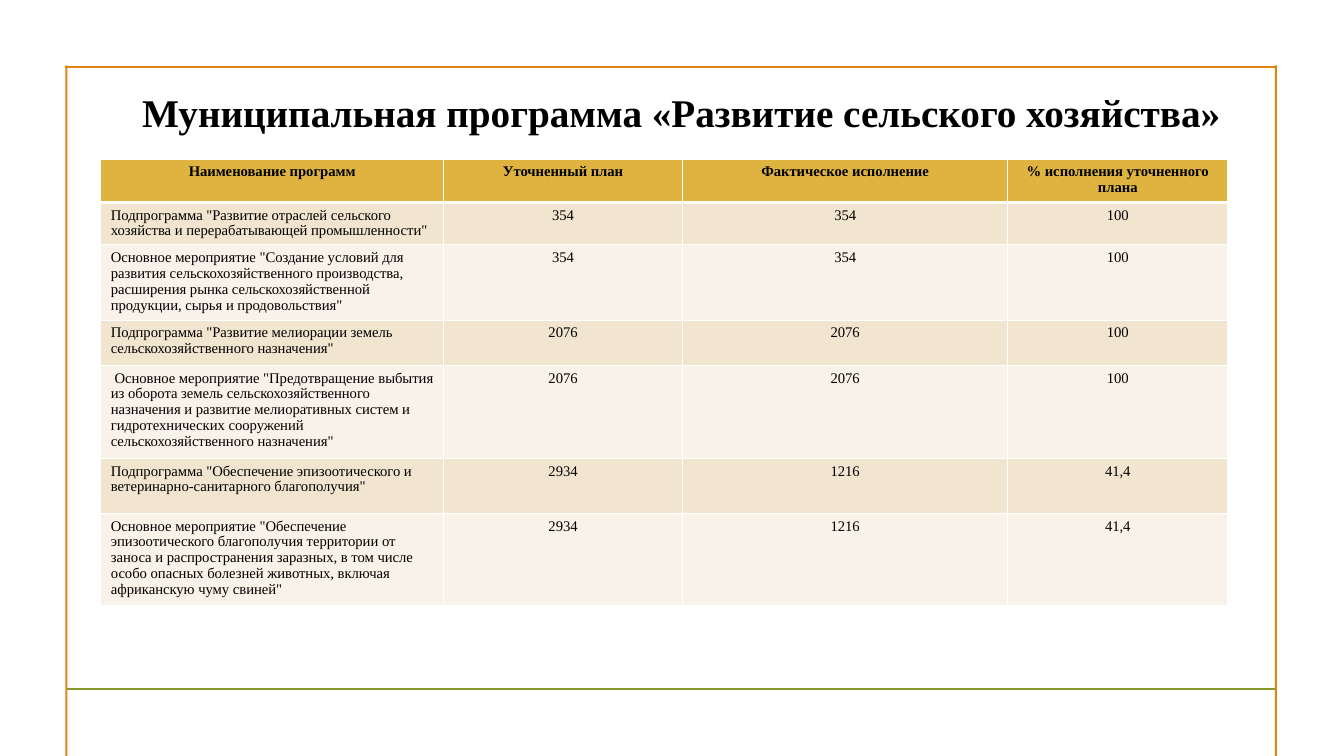
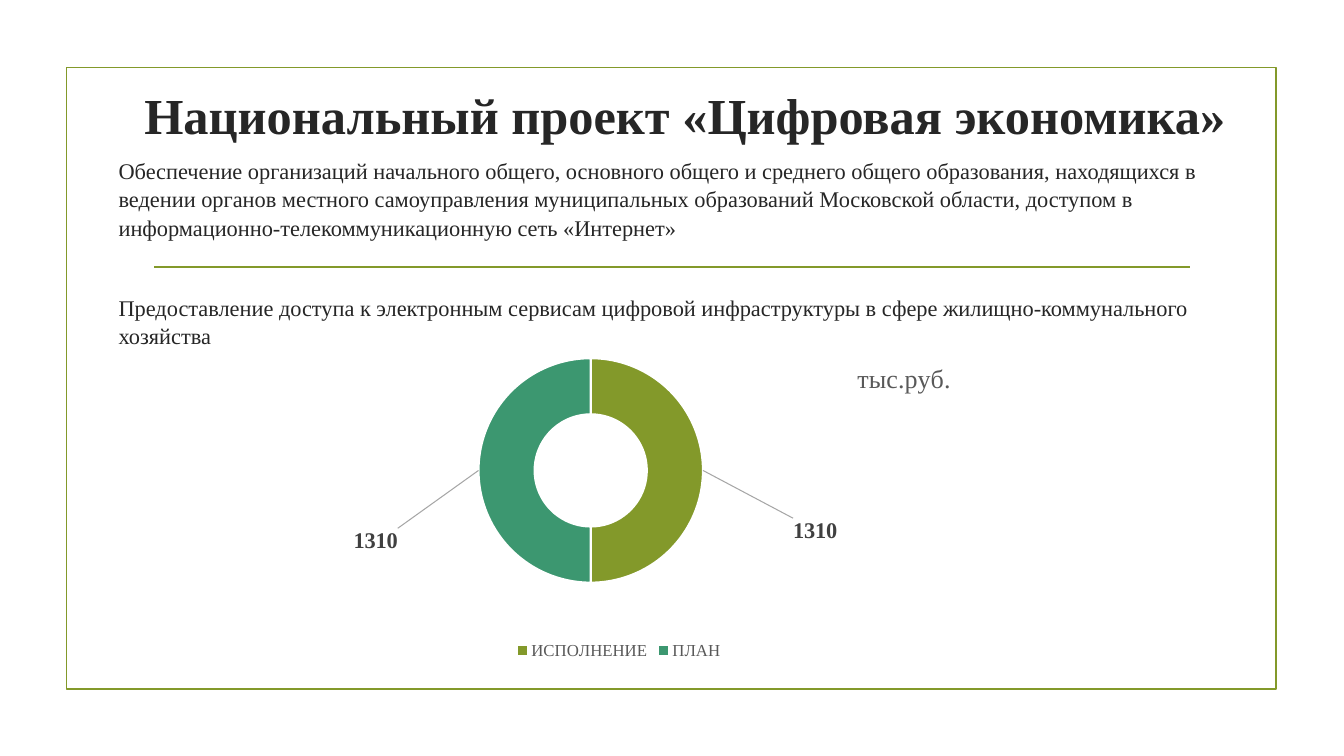
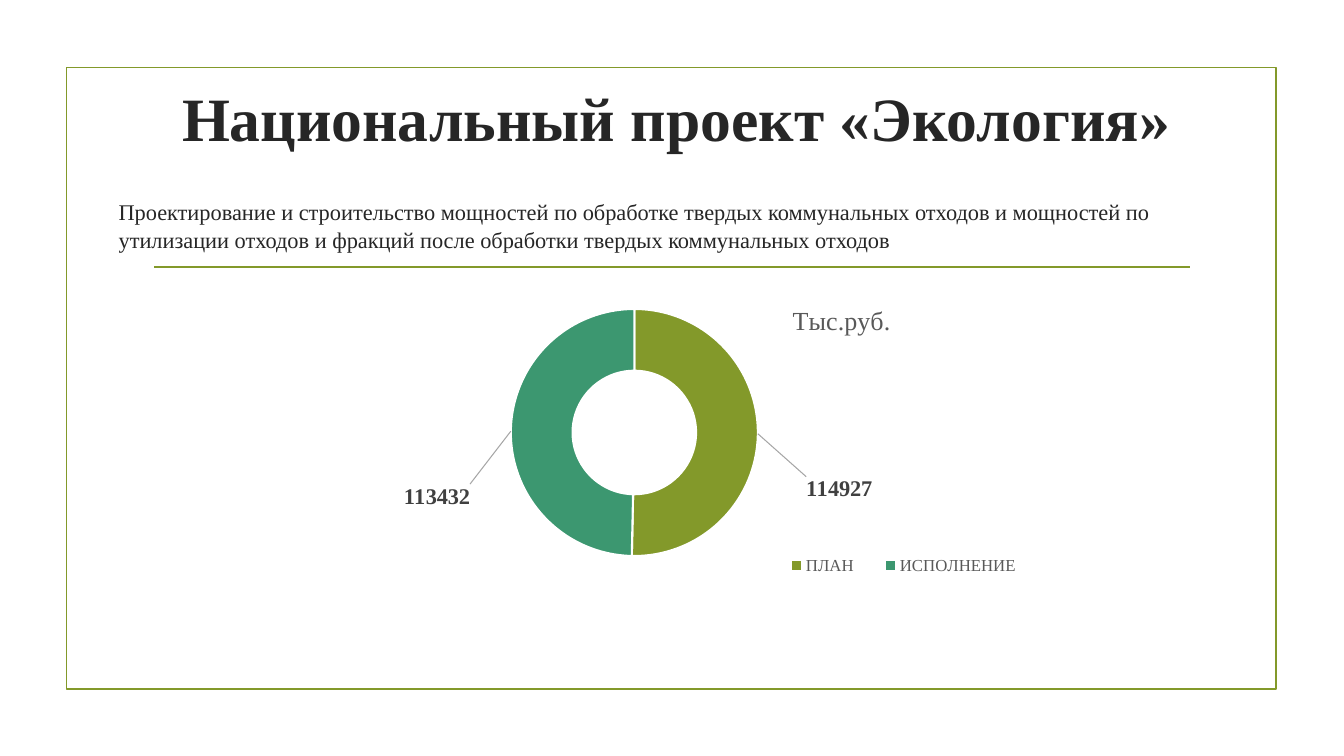
from lxml import etree
from pptx import Presentation
from pptx.chart.data import CategoryChartData
from pptx.dml.color import RGBColor
from pptx.enum import chart as charts, shapes, text
from pptx.oxml import parse_xml
from pptx.oxml.ns import nsdecls, qn
from pptx.util import Cm, Pt

FONT = "Times New Roman"
COLORS = {
    "ink": "262626", "black": "000000", "white": "FFFFFF", "label": "404040",
    "caption": "595959", "leader": "A6A6A6", "olive": "83992A",
    "teal": "3C9770", "orange": "E28312", "header": "DEB340",
    "band_dark": "F2E5CF", "band_light": "F9F2E8",
}
LABEL_OFFSETS = [(0.15, 0.18), (-0.14, 0.21)]

COLUMNS = [8.64, 6.02, 8.2, 5.54]
ROWS = [1.09, 1.07, 1.9, 1.14, 2.34, 1.39, 2.31]
PROGRAMS = [
    ("Наименование программ", "Уточненный план", "Фактическое исполнение",
     "% исполнения уточненного плана"),
    ('Подпрограмма "Развитие отраслей сельского хозяйства и '
     'перерабатывающей промышленности"', "354", "354", "100"),
    ('Основное мероприятие "Создание условий для развития '
     'сельскохозяйственного производства, расширения рынка '
     'сельскохозяйственной продукции, сырья и продовольствия"',
     "354", "354", "100"),
    ('Подпрограмма "Развитие мелиорации земель сельскохозяйственного '
     'назначения"', "2076", "2076", "100"),
    (' Основное мероприятие "Предотвращение выбытия из оборота земель '
     'сельскохозяйственного назначения и развитие мелиоративных систем и '
     'гидротехнических сооружений сельскохозяйственного назначения"',
     "2076", "2076", "100"),
    ('Подпрограмма "Обеспечение эпизоотического и '
     'ветеринарно-санитарного благополучия"', "2934", "1216", "41,4"),
    ('Основное мероприятие "Обеспечение эпизоотического благополучия '
     'территории от заноса и распространения заразных, в том числе особо '
     'опасных болезней животных, включая африканскую чуму свиней"',
     "2934", "1216", "41,4"),
]


def rgb(name):
    return RGBColor.from_string(COLORS[name])


def style(font, size, color, bold=False):
    font.name, font.size, font.bold = FONT, Pt(size), bold
    font.color.rgb = rgb(color)


def add_rect(slide, box, fill=None, line=None):
    rect = slide.shapes.add_shape(shapes.MSO_SHAPE.RECTANGLE, *map(Cm, box))
    rect.shadow.inherit = False
    if fill:
        rect.fill.solid()
        rect.fill.fore_color.rgb = rgb(fill)
    else:
        rect.fill.background()
    if line:
        rect.line.color.rgb = rgb(line)
        rect.line.width = Pt(1.25)
    else:
        rect.line.fill.background()


def add_rule(slide, left, right, y, color, width):
    rule = slide.shapes.add_connector(
        shapes.MSO_CONNECTOR.STRAIGHT, Cm(left), Cm(y), Cm(right), Cm(y))
    rule.line.color.rgb = rgb(color)
    rule.line.width = Pt(width)
    etree.SubElement(rule._element.spPr, qn("a:effectLst"))


def add_text(slide, box, paragraphs, size, color="ink", bold=False,
             align=text.PP_ALIGN.LEFT, anchor=text.MSO_ANCHOR.TOP,
             gap=0, spacing=None):
    frame = slide.shapes.add_textbox(*map(Cm, box)).text_frame
    frame.word_wrap = True
    frame.vertical_anchor = anchor
    for i, words in enumerate(paragraphs):
        paragraph = frame.add_paragraph() if i else frame.paragraphs[0]
        paragraph.text = words
        paragraph.alignment = align
        paragraph.line_spacing = spacing
        if i:
            paragraph.space_before = Pt(gap)
        style(paragraph.font, size, color, bold)


def add_title(slide, box, words, size):
    add_text(slide, box, [words], size, bold=True,
             align=text.PP_ALIGN.CENTER, anchor=text.MSO_ANCHOR.MIDDLE)


def add_body(slide, box, paragraphs):
    add_text(slide, box, paragraphs, 16, gap=37, spacing=1.05)


def new_slide(prs):
    """Blank slide with the green frame."""
    slide = prs.slides.add_slide(prs.slide_layouts[6])
    add_rect(slide, (1.68, 1.7, 30.48, 15.67), line="olive")
    return slide


def set_borders(cell, bottom):
    widths = {"lnL": 1, "lnR": 1, "lnT": 1, "lnB": bottom}
    for i, (side, width) in enumerate(widths.items()):
        cell._tc.get_or_add_tcPr().insert(i, parse_xml(
            f'<a:{side} {nsdecls("a")} w="{Pt(width)}"><a:solidFill>'
            f'<a:srgbClr val="{COLORS["white"]}"/></a:solidFill></a:{side}>'))


def add_program_table(slide):
    table = slide.shapes.add_table(
        len(ROWS), len(COLUMNS), Cm(2.54), Cm(4.01),
        Cm(sum(COLUMNS)), Cm(sum(ROWS))).table
    for column, width in zip(table.columns, COLUMNS):
        column.width = Cm(width)
    for r, (height, values) in enumerate(zip(ROWS, PROGRAMS)):
        table.rows[r].height = Cm(height)
        band = "band_dark" if r % 2 else "band_light"
        for c, value in enumerate(values):
            cell = table.cell(r, c)
            cell.fill.solid()
            cell.fill.fore_color.rgb = rgb(band if r else "header")
            set_borders(cell, bottom=1 if r else 3)
            paragraph = cell.text_frame.paragraphs[0]
            paragraph.text = value
            paragraph.line_spacing = 0.97
            if c or not r:
                paragraph.alignment = text.PP_ALIGN.CENTER
            style(paragraph.font, 10.5, "black", bold=not r)


def place(element, after, mode="", **fractions):
    """Give a chart part a manual layout, following its last `after` child."""
    for layout in element.findall(qn("c:layout")):
        element.remove(layout)
    modes = "".join(f'<c:{axis}Mode val="{mode}"/>' for axis in "xy" if mode)
    target = '<c:layoutTarget val="inner"/>' if after is None else ""
    lengths = "".join(f'<c:{k} val="{v}"/>' for k, v in fractions.items())
    layout = parse_xml(
        f'<c:layout {nsdecls("c")}><c:manualLayout>{target}{modes}{lengths}'
        '</c:manualLayout></c:layout>')
    if after is None:
        element.insert(0, layout)
    else:
        element.findall(qn(after))[-1].addnext(layout)


def add_doughnut(slide, box, values, caption, caption_at, plot_at,
                 legend_at=None):
    data = CategoryChartData()
    data.categories = list(values)
    data.add_series("Series 1", list(values.values()))
    chart = slide.shapes.add_chart(
        charts.XL_CHART_TYPE.DOUGHNUT, *map(Cm, box), data).chart
    style(chart.font, 10, "black")
    plot = chart.plots[0]
    plot.vary_by_categories = True
    for hole in chart.element.xpath(".//c:holeSize"):
        hole.set("val", "75")
    place(chart.element.xpath(".//c:plotArea")[0], None, "edge", **plot_at)

    chart.has_title = True
    heading = chart.chart_title.text_frame.paragraphs[0]
    heading.text = caption
    style(heading.font, 18.6, "caption")
    place(chart.element.xpath(".//c:title")[0], "c:tx", "edge", **caption_at)

    chart.has_legend = True
    chart.legend.position = charts.XL_LEGEND_POSITION.BOTTOM
    chart.legend.include_in_layout = False
    style(chart.legend.font, 12, "caption")
    if legend_at:
        place(chart.element.xpath(".//c:legend")[0], "c:legendPos", "edge",
              **legend_at)

    series = plot.series[0]
    series.data_labels.show_value = True
    style(series.data_labels.font, 16, "label", bold=True)
    for i, (color, (x, y)) in enumerate(zip(("olive", "teal"),
                                            LABEL_OFFSETS)):
        point = series.points[i]
        point.format.fill.solid()
        point.format.fill.fore_color.rgb = rgb(color)
        point.format.line.color.rgb = rgb("white")
        point.format.line.width = Pt(1.5)
        style(point.data_label.font, 16, "label", bold=True)
        place(chart.element.xpath(".//c:ser/c:dLbls/c:dLbl")[i], "c:idx",
              x=x, y=y)
    chart.element.xpath(".//c:ser/c:dLbls")[0].append(parse_xml(
        f'<c:leaderLines {nsdecls("c", "a")}><c:spPr><a:ln w="{Pt(0.75)}">'
        f'<a:solidFill><a:srgbClr val="{COLORS["leader"]}"/></a:solidFill>'
        '</a:ln></c:spPr></c:leaderLines>'))


def agriculture_slide(prs):
    slide = new_slide(prs)
    for left in (1.65, 32.13):
        add_rect(slide, (left, 1.65, 0.05, 17.4), fill="orange")
    add_rule(slide, 1.65, 32.18, 1.68, "orange", 1.5)
    add_program_table(slide)
    add_text(slide, (3.33, 2.11, 28.45, 1.45),
             ["Муниципальная программа «Развитие сельского хозяйства»"],
             28, "black", bold=True)


def project_slide(prs, title, title_box, size, body, body_box):
    slide = new_slide(prs)
    add_rule(slide, 3.89, 30, 6.73, "olive", 1.25)
    add_title(slide, title_box, title, size)
    add_body(slide, body_box, body)
    return slide


def digital_slide(prs):
    slide = project_slide(
        prs, "Национальный проект «Цифровая экономика»",
        (2.34, 1.07, 29.85, 3.63), 36,
        ["Обеспечение организаций начального общего, основного общего и "
         "среднего общего образования, находящихся в ведении органов "
         "местного самоуправления муниципальных образований Московской "
         "области, доступом в информационно-телекоммуникационную сеть "
         "«Интернет»",
         "Предоставление доступа к электронным сервисам цифровой "
         "инфраструктуры в сфере жилищно-коммунального хозяйства"],
        (2.74, 3.81, 28.58, 5))
    add_doughnut(slide, (3.81, 8.26, 23.57, 8.46),
                 {"ИСПОЛНЕНИЕ": 1310, "ПЛАН": 1310},
                 "тыс.руб.", dict(x=0.75, y=0.09),
                 dict(x=0.35, y=0.06, w=0.24, h=0.73))


def ecology_slide(prs):
    slide = project_slide(
        prs, "Национальный проект «Экология»",
        (1.91, 1.47, 30.28, 2.97), 44,
        ["Проектирование и строительство мощностей по обработке твердых "
         "коммунальных отходов и мощностей по утилизации отходов и фракций "
         "после обработки твердых коммунальных отходов"],
        (2.74, 4.83, 28.58, 1.7))
    add_doughnut(slide, (7.59, 6.99, 18.87, 7.82),
                 {"ПЛАН": 114927, "ИСПОЛНЕНИЕ": 113432},
                 "Тыс.руб.", dict(x=0.65, y=0.07),
                 dict(x=0.28, y=0, w=0.33, h=1),
                 dict(x=0.62, y=0.88, w=0.37, h=0.1))


def main():
    prs = Presentation()
    prs.slide_width, prs.slide_height = Cm(33.87), Cm(19.05)
    agriculture_slide(prs)
    digital_slide(prs)
    ecology_slide(prs)
    prs.save("out.pptx")


if __name__ == "__main__":
    main()
